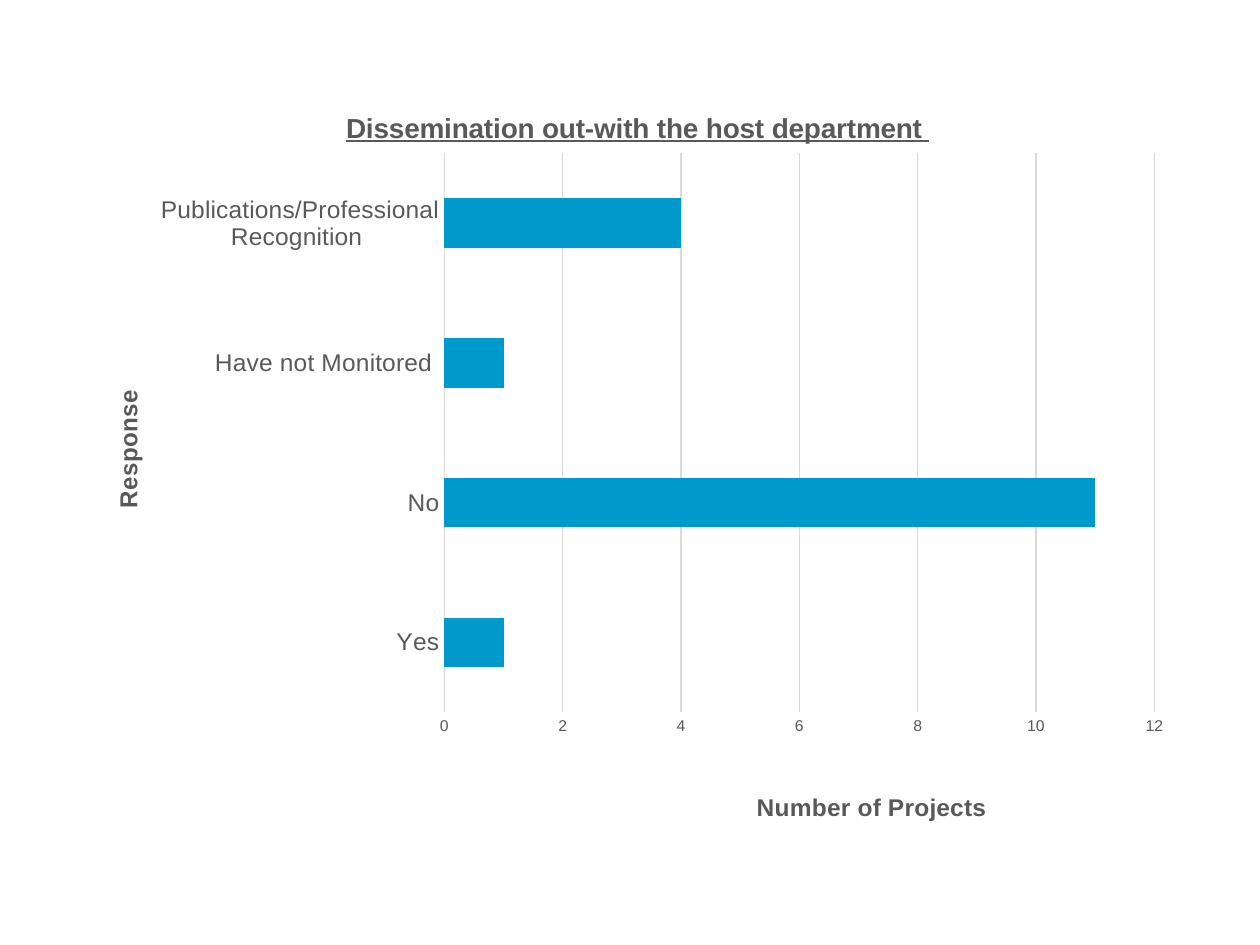
from dataclasses import dataclass

from lxml.etree import SubElement
from pptx import Presentation
from pptx.chart.data import CategoryChartData
from pptx.dml.color import RGBColor
from pptx.enum.chart import XL_CHART_TYPE as ChartType, XL_TICK_MARK as TickMark
from pptx.oxml.ns import qn
from pptx.util import Pt

BAR_BLUE = RGBColor(0x00, 0x99, 0xCC)
TEXT_GREY = RGBColor(0x59, 0x59, 0x59)
LINE_GREY = RGBColor(0xD9, 0xD9, 0xD9)
FONT = "Arial"

RESPONSES = {
    "Yes": 1,
    "No": 11,
    "Have not Monitored ": 1,
    "Publications/Professional Recognition ": 4,
}


@dataclass
class Caption:
    text: str
    size: int
    left: float
    top: float
    underline: bool = False
    upright: bool = False


HEADING = Caption("Dissemination out-with the host department ", 16, 0.24, 0.04, underline=True)
RESPONSE = Caption("Response", 14, 0.03, 0.42, upright=True)
PROJECTS = Caption("Number of Projects ", 14, 0.61, 0.96)


def set_font(font, **values) -> None:
    font.color.rgb = TEXT_GREY
    for name, value in {"name": FONT, **values}.items():
        setattr(font, name, value)


def place(element, index: int, **settings) -> None:
    """Give a chart part a manual layout, as fractions of the chart."""
    for old in element.findall(qn("c:layout")):
        element.remove(old)
    layout = SubElement(element, qn("c:layout"))
    element.insert(index, layout)
    manual = SubElement(layout, qn("c:manualLayout"))
    for name, value in settings.items():
        SubElement(manual, qn(f"c:{name}")).set("val", str(value))


def write_caption(title, caption: Caption) -> None:
    frame = title.text_frame
    span = frame.paragraphs[0].add_run()
    span.text = caption.text
    set_font(span.font, size=Pt(caption.size), bold=True, underline=caption.underline)
    if caption.upright:
        body = title.element.find(".//" + qn("a:bodyPr"))
        body.set("rot", "-5400000")
        body.set("vert", "horz")
    place(title.element, 1, xMode="edge", yMode="edge", x=caption.left, y=caption.top)


def format_axis(axis, caption: Caption, label_size: int) -> None:
    axis.has_title = True
    write_caption(axis.axis_title, caption)
    axis.major_tick_mark = axis.minor_tick_mark = TickMark.NONE
    set_font(axis.tick_labels.font, size=Pt(label_size), bold=False)


def draw_line(line) -> None:
    line.color.rgb = LINE_GREY
    line.width = Pt(0.75)


def add_response_chart(page) -> None:
    data = CategoryChartData()
    data.categories = list(RESPONSES)
    data.add_series("Series 1", list(RESPONSES.values()))
    chart = page.shapes.add_chart(
        ChartType.BAR_CLUSTERED, Pt(42.5), Pt(43.2), Pt(635), Pt(430.5), data
    ).chart
    set_font(chart.font, size=Pt(10))
    chart.has_legend = False
    chart.has_title = True
    write_caption(chart.chart_title, HEADING)

    format_axis(chart.category_axis, RESPONSE, 14)
    draw_line(chart.category_axis.format.line)

    values = chart.value_axis
    format_axis(values, PROJECTS, 9)
    values.format.line.fill.background()
    values.has_major_gridlines = True
    draw_line(values.major_gridlines.format.line)
    values.minimum_scale, values.maximum_scale, values.major_unit = 0, 12, 2

    plot = chart.plots[0]
    plot.gap_width = 182
    plot.vary_by_categories = False
    fill = plot.series[0].format.fill
    fill.solid()
    fill.fore_color.rgb = BAR_BLUE

    area = chart.element.find(".//" + qn("c:plotArea"))
    place(area, 0, layoutTarget="inner", xMode="edge", yMode="edge",
          x=0.333, y=0.105, w=0.639, h=0.754)


def main() -> None:
    deck = Presentation()
    deck.slide_width, deck.slide_height = Pt(720), Pt(540)
    page = deck.slides.add_slide(deck.slide_layouts[6])
    add_response_chart(page)
    deck.save("out.pptx")


if __name__ == "__main__":
    main()
